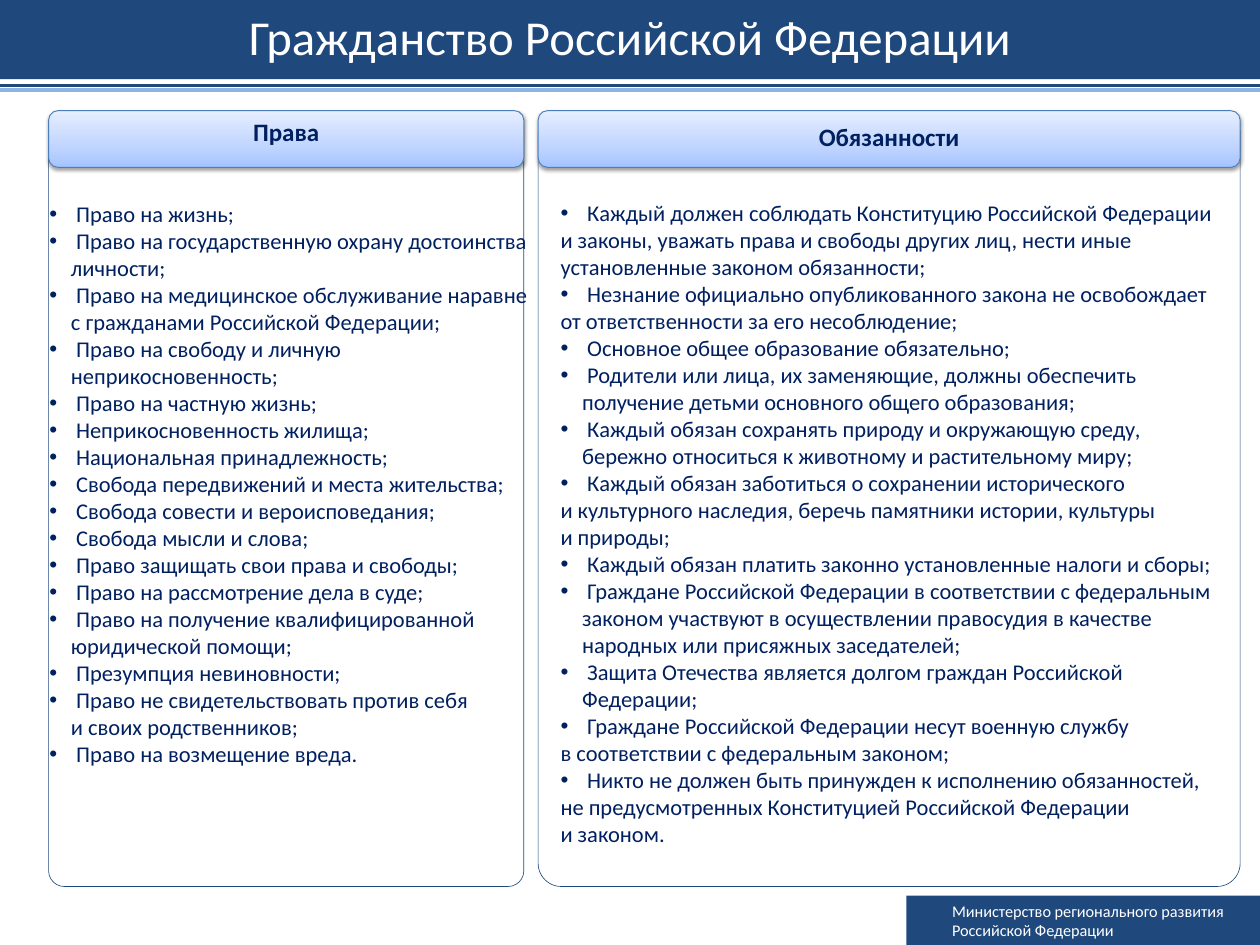
from copy import deepcopy
from lxml import etree
from pptx import Presentation
from pptx import util as u
from pptx.dml.color import RGBColor
from pptx.enum import shapes, text
from pptx.oxml import ns

WIDTH, HEIGHT = 14, 10.5
NAVY, SKY, INK, WHITE = "1F497D", "8EB4E3", "002060", "FFFFFF"
PANEL_TOP, PANEL_HEIGHT, HEADING_HEIGHT = 1.23, 8.62, 0.63
HANG = 0.24

RIGHTS = [
    "• Право на жизнь;",
    "• Право на государственную охрану достоинства личности;",
    "• Право на медицинское обслуживание наравне с гражданами Российской Федерации;",
    "• Право на свободу и личную неприкосновенность;",
    "• Право на частную жизнь;",
    "• Неприкосновенность жилища;",
    "• Национальная принадлежность;",
    "• Свобода передвижений и места жительства;",
    "• Свобода совести и вероисповедания;",
    "• Свобода мысли и слова;",
    "• Право защищать свои права и свободы;",
    "• Право на рассмотрение дела в суде;",
    "• Право на получение квалифицированной юридической помощи;",
    "• Презумпция невиновности;",
    "• Право не свидетельствовать против себя",
    "и своих родственников;",
    "• Право на возмещение вреда.",
]

DUTIES = [
    "• Каждый должен соблюдать Конституцию Российской Федерации",
    "и законы, уважать права и свободы других лиц, нести иные установленные законом обязанности;",
    "• Незнание официально опубликованного закона не освобождает",
    "от ответственности за его несоблюдение;",
    "• Основное общее образование обязательно;",
    "• Родители или лица, их заменяющие, должны обеспечить получение детьми основного общего образования;",
    "• Каждый обязан сохранять природу и окружающую среду, бережно относиться к животному и растительному миру;",
    "• Каждый обязан заботиться о сохранении исторического",
    "и культурного наследия, беречь памятники истории, культуры",
    "и природы;",
    "• Каждый обязан платить законно установленные налоги и сборы;",
    "• Граждане Российской Федерации в соответствии с федеральным законом участвуют"
    " в осуществлении правосудия в качестве народных или присяжных заседателей;",
    "• Защита Отечества является долгом граждан Российской Федерации;",
    "• Граждане Российской Федерации несут военную службу",
    "в соответствии с федеральным законом;",
    "• Никто не должен быть принужден к исполнению обязанностей,",
    "не предусмотренных Конституцией Российской Федерации",
    "и законом.",
]


def colour(value):
    return RGBColor.from_string(value)


def inches(*values):
    return [u.Inches(value) for value in values]


def add_element(parent, tag, **attributes):
    return etree.SubElement(parent, ns.qn(tag), attributes)


def write(para, words, size=18, ink=INK, bold=False, align=None, spacing=None, margin=0, bullet=False):
    properties = para._p.get_or_add_pPr()
    properties.set("marL", str(u.Inches(margin + HANG * bullet)))
    properties.set("indent", str(u.Inches(-HANG * bullet)))
    if bullet:
        add_element(properties, "a:buFont", typeface="Arial")
        add_element(properties, "a:buChar", char="•")
    para.alignment = align
    if spacing:
        para.line_spacing = u.Pt(spacing)
    para.text = words
    for span in para.runs:
        span.font.name, span.font.size, span.font.bold = "Calibri", u.Pt(size), bold
        span.font.color.rgb = colour(ink)


def add_box(page, place, kind=shapes.MSO_SHAPE.RECTANGLE, fill=None, line=None, weight=0.5):
    box = page.shapes.add_shape(kind, *inches(*place))
    box.shadow.inherit = False
    if fill:
        box.fill.solid()
        box.fill.fore_color.rgb = colour(fill)
    else:
        box.fill.background()
    if line:
        box.line.color.rgb = colour(line)
        box.line.width = u.Pt(weight)
    else:
        box.line.fill.background()
    box.text_frame.vertical_anchor = text.MSO_ANCHOR.MIDDLE
    return box


def add_rule(page, top, ink):
    rule = page.shapes.add_connector(shapes.MSO_CONNECTOR.STRAIGHT, *inches(0, top, WIDTH, top))
    rule.line.color.rgb = colour(ink)
    rule.line.width = u.Pt(3)
    add_element(rule._element.spPr, "a:effectLst")


def shade(box):
    box.fill.gradient()
    box.fill.gradient_angle = 90
    stops = box._element.spPr.find(".//" + ns.qn("a:gsLst"))
    stops.insert(1, deepcopy(stops[0]))
    for stop, (position, value) in zip(
        box.fill.gradient_stops, ((0, "A4C4FF"), (0.35, "BFD4FF"), (1, "E6EEFF"))
    ):
        stop.position = position
        stop.color.rgb = colour(value)
    effects = box._element.spPr.find(ns.qn("a:effectLst"))
    shadow = add_element(effects, "a:outerShdw", blurRad=str(u.Pt(3.1)), dist=str(u.Pt(1.6)),
                         dir="5400000", rotWithShape="0")
    add_element(add_element(shadow, "a:srgbClr", val="000000"), "a:alpha", val="38000")


def add_panel(page, left, width, heading, spacing):
    rounded = shapes.MSO_SHAPE.ROUNDED_RECTANGLE
    frame = add_box(page, (left, PANEL_TOP, width, PANEL_HEIGHT), rounded, line=NAVY)
    frame.adjustments[0] = 0.033
    header = add_box(page, (left, PANEL_TOP, width, HEADING_HEIGHT), rounded, line="4B7EBC", weight=0.75)
    shade(header)
    write(header.text_frame.paragraphs[0], heading, size=20, bold=True,
          align=text.PP_ALIGN.CENTER, spacing=spacing)


def add_list(page, place, lines, margin=0):
    frame = page.shapes.add_textbox(*inches(*place)).text_frame
    frame.word_wrap = True
    for index, line in enumerate(lines):
        para = frame.add_paragraph() if index else frame.paragraphs[0]
        bullet = line.startswith("•")
        write(para, line.removeprefix("•"), margin=margin - HANG * bullet if margin else 0, bullet=bullet)


def main():
    deck = Presentation()
    deck.slide_width, deck.slide_height = inches(WIDTH, HEIGHT)
    page = deck.slides.add_slide(deck.slide_layouts[6])

    footer = add_box(page, (10.07, 9.95, WIDTH - 10.07, HEIGHT - 9.95), fill=NAVY)
    write(footer.text_frame.paragraphs[0], "Министерство регионального развития\vРоссийской Федерации",
          size=13, ink=WHITE, align=text.PP_ALIGN.LEFT, margin=0.41)
    add_rule(page, 0.95, NAVY)
    add_rule(page, 1, SKY)
    banner = add_box(page, (0, 0, WIDTH, 0.88), fill=NAVY)
    write(banner.text_frame.paragraphs[0], "Гражданство Российской Федерации",
          size=39, ink=WHITE, align=text.PP_ALIGN.CENTER, spacing=40.6)

    add_panel(page, 0.54, 5.28, "Права", 12)
    add_panel(page, 5.98, 7.8, "Обязанности", 19.6)
    add_list(page, (-0.01, 2.17, 5.98, 7.48), RIGHTS, margin=0.7)
    add_list(page, (6.13, 2.16, 7.56, 7.98), DUTIES)
    deck.save("out.pptx")


if __name__ == "__main__":
    main()
